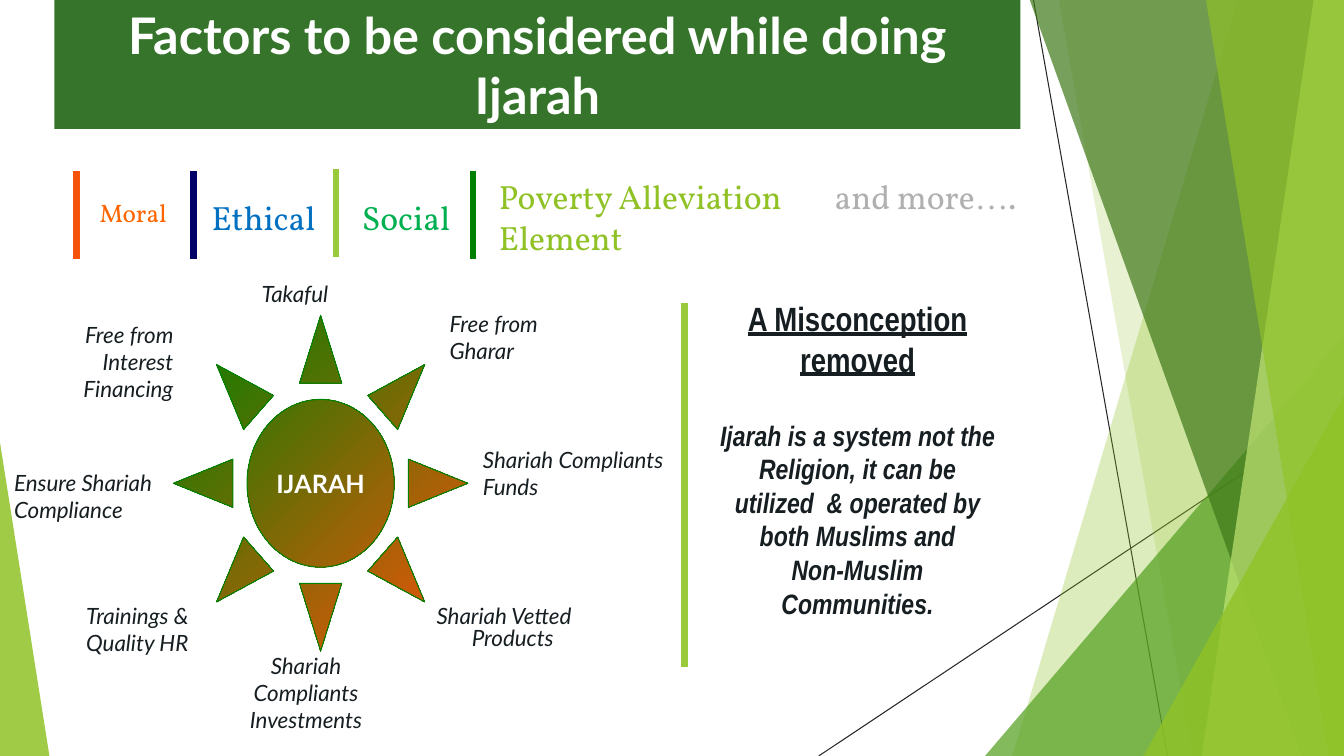
from dataclasses import dataclass
from lxml import etree
from pptx import Presentation, util as u
from pptx.dml.color import RGBColor
from pptx.enum import shapes as sh, text as tx
from pptx.oxml import ns

In = u.Inches
ALIGN, ANCHOR = tx.PP_ALIGN, tx.MSO_ANCHOR
LEFT, MID, RIGHT = ALIGN.LEFT, ALIGN.CENTER, ALIGN.RIGHT


@dataclass(frozen=True)
class Theme:
    # Colours
    white: str = "FFFFFF"
    ink: str = "161E22"
    hair: str = "262626"
    banner: str = "35742A"
    lime: str = "90C226"
    leaf: str = "54A021"
    moss: str = "3F7819"
    pale: str = "C0E474"
    bar: str = "99CA3C"
    green: str = "008000"
    flame: str = "F5530B"
    navy: str = "000066"
    moral: str = "FF6600"
    blue: str = "0070C0"
    social: str = "00B050"
    gray: str = "B0B0B0"
    # Type sizes
    title: int = 36
    head: int = 24
    body: int = 20
    small: int = 18
    label: int = 16
    # Fonts
    sans: str = "Lato"
    serif: str = "Vollkorn"
    dots: str = "Times New Roman"
    slim: str = "Arial Narrow"


T = Theme()


def rgb(code):
    return RGBColor.from_string(code)


def apply(item, **values):
    for name, value in values.items():
        setattr(item, name, value)


def style(name, size, color, **flags):
    return dict(name=name, size=u.Pt(size), color=color, **flags)


def add_run(para, words, form):
    font = para.add_run()
    font.text = words
    font = font.font
    apply(font, **{k: v for k, v in form.items() if k != "color"})
    font.color.rgb = rgb(form["color"])


def set_frame(shape, anchor, pad=(0.1, 0.05), wrap=True):
    side, edge = map(In, pad)
    frame = shape.text_frame
    apply(frame, word_wrap=wrap, auto_size=tx.MSO_AUTO_SIZE.NONE,
          vertical_anchor=anchor, margin_left=side, margin_right=side,
          margin_top=edge, margin_bottom=edge)
    return frame


def add_text(slide, box, paras, align=LEFT, anchor=ANCHOR.TOP, pad=(0.1, 0.05)):
    """Each paragraph is a list of (words, style) runs."""
    frame = set_frame(slide.shapes.add_textbox(*map(In, box)), anchor, pad)
    for i, runs in enumerate(paras):
        para = frame.add_paragraph() if i else frame.paragraphs[0]
        para.alignment = align
        for words, form in runs:
            add_run(para, words, form)
    return frame.paragraphs


def add_line(slide, start, end, color, width):
    line = slide.shapes.add_connector(
        sh.MSO_CONNECTOR.STRAIGHT, *map(In, start + end))
    line.line.color.rgb = rgb(color)
    line.line.width = u.Pt(width)
    etree.SubElement(line._element.spPr, ns.qn("a:effectLst"))


def tint(shape, color, alpha):
    shape.shadow.inherit = False
    shape.fill.solid()
    shape.fill.fore_color.rgb = rgb(color)
    shape.line.fill.background()
    tone = shape._element.spPr.find(".//" + ns.qn("a:srgbClr"))
    etree.SubElement(tone, ns.qn("a:alpha"), val=str(alpha * 1000))


def add_pane(slide, top, foot, color, alpha):
    """A pane from a slanted left edge to the slide's right edge."""
    edge, high, low = 13.33, -0.01, 7.5
    pts = [(top, high), (edge, high), (edge, low), (foot, low)]
    pts = [(In(x), In(y)) for x, y in pts]
    form = slide.shapes.build_freeform(*pts[0], scale=1.0)
    form.add_line_segments(pts[1:], close=True)
    tint(form.convert_to_shape(), color, alpha)


def add_wedge(slide, box, tip, color, alpha):
    wedge = slide.shapes.add_shape(
        sh.MSO_SHAPE.ISOSCELES_TRIANGLE, *map(In, box))
    wedge.adjustments[0] = tip
    tint(wedge, color, alpha)


def add_decor(slide):
    add_line(slide, (10.25, 0), (11.58, 7.5), T.hair, 0.75)
    add_line(slide, (13.33, 4.03), (8.12, 7.5), T.hair, 0.75)
    add_pane(slide, 12.28, 10.04, T.lime, 30)
    add_pane(slide, 10.5, 11.83, T.lime, 20)
    add_wedge(slide, (9.77, 3.33, 3.56, 4.17), 1, T.leaf, 72)
    add_pane(slide, 10.21, 12.91, T.moss, 70)
    add_pane(slide, 13.03, 11.92, T.pale, 70)
    add_pane(slide, 11.96, 13.18, T.lime, 65)
    add_wedge(slide, (11.34, 3.93, 1.99, 3.57), 1, T.lime, 80)
    add_wedge(slide, (0, 4.39, 0.49, 3.11), 0, T.lime, 85)


def set_title(slide, words):
    title = slide.shapes.title
    apply(title, left=In(0.54), top=In(0), width=In(9.58), height=In(1.28))
    title.fill.solid()
    title.fill.fore_color.rgb = rgb(T.banner)
    para = set_frame(title, ANCHOR.MIDDLE).paragraphs[0]
    para.alignment = MID
    add_run(para, words, style(T.sans, T.title, T.white, bold=True))


def add_factors(slide):
    bars = [(0.76, 1.7, T.flame), (1.92, 1.7, T.navy),
            (3.33, 1.68, T.bar), (4.69, 1.7, T.green)]
    for x, y, color in bars:
        add_line(slide, (x, y), (x, y + 0.87), color, 4.5)
    words = [("Moral", (0.89, 1.91, 0.93, 0.4), T.small, T.moral),
             ("Ethical", (2, 1.9, 1.73, 0.5), T.head, T.blue),
             ("Social", (3.49, 1.9, 1.73, 0.5), T.head, T.social),
             ("Poverty Alleviation Element", (4.85, 1.7, 3.17, 0.91),
              T.head, T.lime)]
    for word, box, size, color in words:
        add_text(slide, box, [[(word, style(T.serif, size, color))]])
    more = style(T.serif, T.head, T.gray)
    dots = dict(more, name=T.dots)
    add_text(slide, (8.18, 1.7, 2.44, 0.5),
             [[("and more", more), ("…", dots), (".", more)]])


def add_note(slide):
    add_line(slide, (6.79, 3.01), (6.79, 6.62), T.bar, 4.5)
    head = style(T.slim, T.head, T.ink, bold=True, underline=True)
    body = style(T.slim, T.body, T.ink, bold=True, italic=True)
    paras = add_text(slide, (7.01, 2.91, 2.99, 3.4), [
        [("A Misconception removed", head)],
        [("Ijarah is a system not the Religion, it can be utilized  & "
          "operated by both Muslims and", body)],
        [("Non-Muslim Communities.", body)]], MID)
    paras[1].space_before = u.Pt(28)


def add_sun(slide):
    sun = slide.shapes.add_shape(
        sh.MSO_SHAPE.SUN, *map(In, (1.72, 3.13, 2.92, 3.33)))
    sun.shadow.inherit = False
    sun.fill.gradient()
    sun.fill.gradient_angle = 315
    for stop, color in zip(sun.fill.gradient_stops, (T.green, T.flame)):
        stop.color.rgb = rgb(color)
    for i, spot in enumerate((0, 1)):
        sun.fill.gradient_stops[i].position = spot
    sun.line.color.rgb = rgb(T.green)
    sun.line.width = u.Pt(0.75)
    para = set_frame(sun, ANCHOR.MIDDLE, wrap=False).paragraphs[0]
    para.alignment = MID
    add_run(para, "IJARAH", style(T.sans, T.small, T.white, bold=True))


def add_labels(slide):
    form = style(T.sans, T.label, T.ink, italic=True)

    def label(box, align, *lines):
        return add_text(slide, box, [[(line, form)] for line in lines],
                        align, ANCHOR.MIDDLE, (0.05, 0.05))

    label((0.09, 4.68, 1.92, 0.48), LEFT, "Ensure Shariah Compliance")
    label((2.23, 6.63, 1.61, 0.48), MID, "Shariah Compliants Investments")
    label((4.74, 4.45, 1.93, 0.48), LEFT, "Shariah Compliants Funds")
    label((4.41, 3.1, 1.61, 0.48), LEFT, "Free from Gharar")
    label((2.12, 2.67, 1.61, 0.48), MID, "Takaful")
    label((0.16, 3.3, 1.61, 0.58), RIGHT, "Free from Interest", "Financing")
    label((0.46, 5.95, 1.46, 0.58), RIGHT, "Trainings & Quality HR")
    vetted = label((4.28, 5.86, 1.99, 0.76), LEFT, "Shariah Vetted Products")[0]
    vetted.line_spacing = 0.8
    props = vetted._p.get_or_add_pPr()
    props.set("marL", str(In(0.35)))
    props.set("indent", str(-In(0.35)))


def main():
    deck = Presentation()
    apply(deck, slide_width=In(13.33), slide_height=In(7.5))
    slide = deck.slides.add_slide(deck.slide_layouts[5])
    add_decor(slide)
    set_title(slide, "Factors to be considered while doing Ijarah")
    add_factors(slide)
    add_note(slide)
    add_sun(slide)
    add_labels(slide)
    deck.save("out.pptx")


if __name__ == "__main__":
    main()
